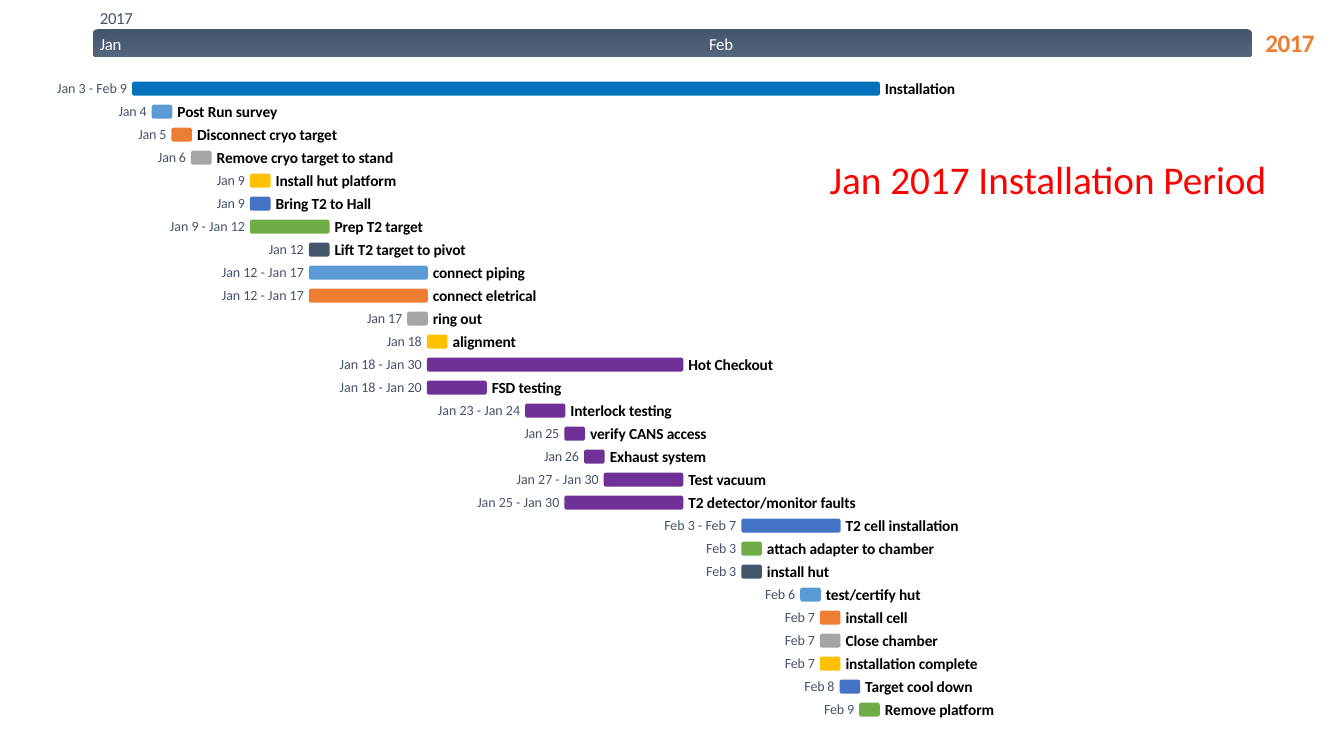
from itertools import cycle
from pptx import Presentation
from pptx.dml.color import RGBColor as Rgb
from pptx.enum.shapes import MSO_SHAPE as Form
from pptx.enum.text import MSO_ANCHOR as Anchor, PP_ALIGN as Align
from pptx.util import Inches as Inch, Pt

HUES = {
    "sky": "5B9BD5", "orange": "ED7D31", "gray": "A5A5A5", "gold": "FFC000",
    "indigo": "4472C4", "green": "70AD47", "slate": "44546A", "steel": "52667F",
    "blue": "0072BC", "purple": "6F3198", "red": "FF0000",
    "white": "FFFFFF", "black": "000000",
}
TURN = ["sky", "orange", "gray", "gold", "indigo", "green", "slate"]

# Task, first day, last day (counted from Jan 1), label width, own colour
TASKS = [
    ("Installation", 3, 40, 0.72, "blue"),
    ("Post Run survey", 4, 4, 1.01, None),
    ("Disconnect cryo target", 5, 5, 1.43, None),
    ("Remove cryo target to stand", 6, 6, 1.79, None),
    ("Install hut platform", 9, 9, 1.22, None),
    ("Bring T2 to Hall", 9, 9, 0.97, None),
    ("Prep T2 target", 9, 12, 0.9, None),
    ("Lift T2 target to pivot", 12, 12, 1.33, None),
    ("connect piping", 12, 17, 0.94, None),
    ("connect eletrical", 12, 17, 1.06, None),
    ("ring out", 17, 17, 0.5, None),
    ("alignment", 18, 18, 0.65, None),
    ("Hot Checkout", 18, 30, 0.86, "purple"),
    ("FSD testing", 18, 20, 0.71, "purple"),
    ("Interlock testing", 23, 24, 1.03, "purple"),
    ("verify CANS access", 25, 25, 1.18, "purple"),
    ("Exhaust system", 26, 26, 0.99, "purple"),
    ("Test vacuum", 27, 30, 0.79, "purple"),
    ("T2 detector/monitor faults", 25, 30, 1.69, "purple"),
    ("T2 cell installation", 34, 38, 1.15, None),
    ("attach adapter to chamber", 34, 34, 1.69, None),
    ("install hut", 34, 34, 0.64, None),
    ("test/certify hut", 37, 37, 0.97, None),
    ("install cell", 38, 38, 0.64, None),
    ("Close chamber", 38, 38, 0.94, None),
    ("installation complete", 38, 38, 1.35, None),
    ("Target cool down", 39, 39, 1.1, None),
    ("Remove platform", 40, 40, 1.11, None),
]
JAN, DAYS = 31, 59
LEFT, SPAN = 0.92, 11.5
COL = SPAN / DAYS
TOP, ROW = 0.81, 6.16 / (len(TASKS) - 1)


class Chart:
    """Style and current slide, on a grid of day columns and task rows."""

    def __init__(self, deck):
        self.slide = deck.slides.add_slide(deck.slide_layouts[6])
        self.font = "Calibri"

    def col(self, day):
        return LEFT + (day - 1) * COL

    def row(self, n):
        return TOP + n * ROW

    def text(self, words, box, size, hue, bold=False, side=Align.LEFT,
             gap=-10, pad=(0, 0), anchor=Anchor.TOP):
        frame = self.slide.shapes.add_textbox(*map(Inch, box)).text_frame
        frame.word_wrap = False
        frame.vertical_anchor = anchor
        frame.margin_left = frame.margin_right = Inch(pad[0])
        frame.margin_top = frame.margin_bottom = Inch(pad[1])
        para = frame.paragraphs[0]
        para.alignment = side
        run = para.add_run()
        run.text = words
        font = run.font
        font.name, font.size, font.bold = self.font, Pt(size), bold
        font.color.rgb = Rgb.from_string(HUES[hue])
        if gap:
            run._r.get_or_add_rPr().set("spc", str(gap))

    def bar(self, box, hue, fade=None):
        shape = self.slide.shapes.add_shape(Form.ROUNDED_RECTANGLE,
                                            *map(Inch, box))
        shape.shadow.inherit = False
        shape.line.fill.background()
        if fade:
            shape.fill.gradient()
            shape.fill.gradient_angle = 270
            for stop, name in zip(shape.fill.gradient_stops, (hue, fade)):
                stop.color.rgb = Rgb.from_string(HUES[name])
        else:
            shape.fill.solid()
            shape.fill.fore_color.rgb = Rgb.from_string(HUES[hue])

    def date(self, day):
        """Wording of a day and its width."""
        name, num, wide = ("Jan", day, 0.29) if day <= JAN else ("Feb", day - JAN, 0.32)
        return f"{name} {num}", wide + 0.07 * (num > 9)

    def task(self, n, name, start, end, wide, hue):
        x, y, stop = self.col(start), self.row(n), self.col(end + 1)
        self.bar((x, y, stop - x + 0.01, 0.14), hue)
        words, room = self.date(start)
        if end > start:
            last, more = self.date(end)
            words, room = f"{words} - {last}", room + more + 0.1
        self.text(words, (x - 0.05 - room, y - 0.02, room, 0.17), 10, "slate",
                  side=Align.RIGHT, gap=0 if end > start else -10, anchor=Anchor.MIDDLE)
        self.text(name, (stop + 0.06, y - 0.03, wide, 0.19), 11, "black",
                  bold=True, anchor=Anchor.MIDDLE)


def main():
    deck = Presentation()
    deck.slide_width, deck.slide_height = Inch(13.33), Inch(7.5)
    chart = Chart(deck)

    # Time band with year and months
    chart.text("2017", (12.55, 0.27, 0.49, 0.31), 18, "orange", bold=True,
               side=Align.CENTER, gap=-40, anchor=Anchor.MIDDLE)
    chart.bar((LEFT, 0.29, SPAN, 0.28), "slate", "steel")
    for words, day, y, wide, hue in (("Jan", 1, 0.33, 0.22, "white"),
                                     ("Feb", JAN + 1, 0.33, 0.25, "white"),
                                     ("2017", 1, 0.08, 0.33, "slate")):
        chart.text(words, (chart.col(day) + 0.07, y, wide, 0.2), 12, hue,
                   gap=-20, anchor=Anchor.MIDDLE)

    # Task rows: colours take turns unless a task has its own
    turn = cycle(TURN)
    for n, (name, start, end, wide, own) in enumerate(TASKS):
        chart.task(n, name, start, end, wide, own or next(turn))

    # Title
    chart.text("Jan 2017 Installation Period", (8.13, 1.49, 4.64, 0.57), 28,
               "red", gap=0, pad=(0.1, 0.05))
    deck.save("out.pptx")


if __name__ == "__main__":
    main()
